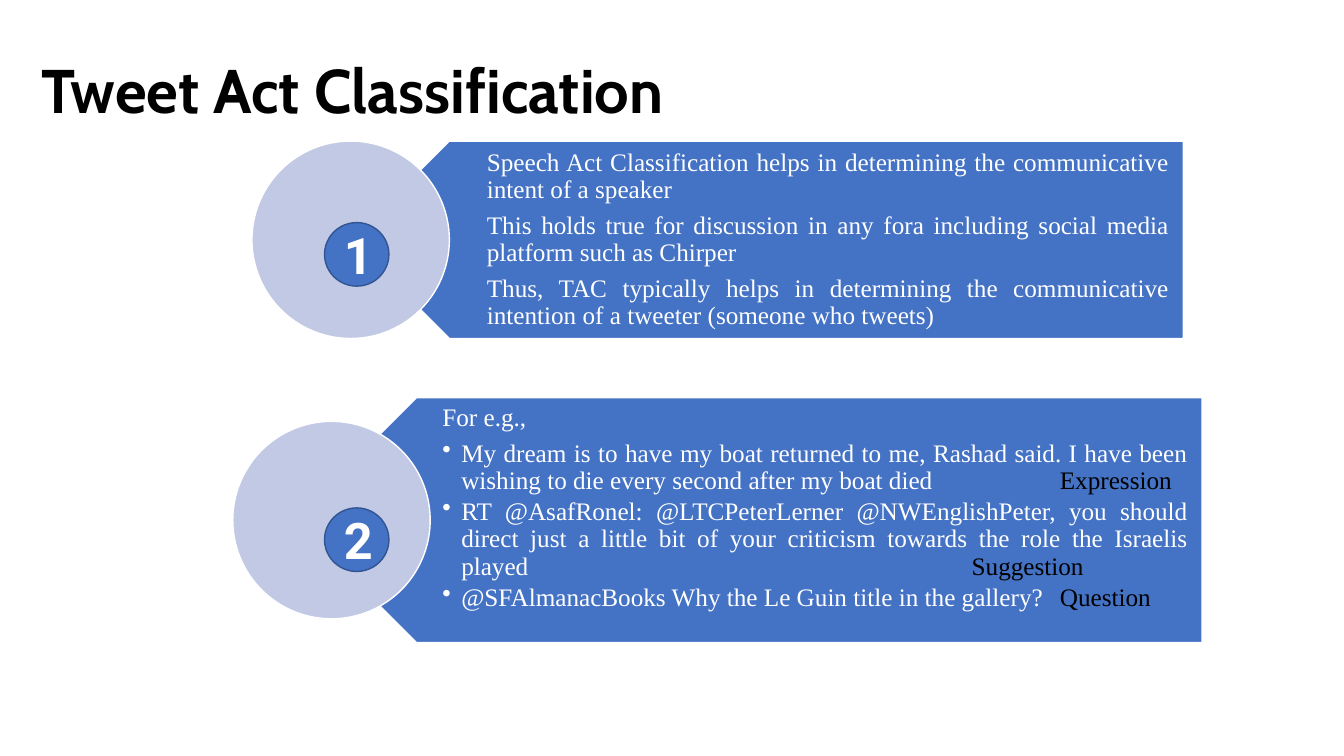
from lxml.etree import SubElement
from pptx import Presentation
from pptx.dml.color import RGBColor
from pptx.enum.shapes import MSO_SHAPE
from pptx.enum.text import MSO_ANCHOR, MSO_AUTO_SIZE, PP_ALIGN
from pptx.oxml.ns import qn
from pptx.util import Pt

BLACK = RGBColor(0x00, 0x00, 0x00)
WHITE = RGBColor(0xFF, 0xFF, 0xFF)
BLUE = RGBColor(0x44, 0x72, 0xC4)
DARK_BLUE = RGBColor(0x32, 0x54, 0x91)
LAVENDER = RGBColor(0xC1, 0xC9, 0xE4)

TITLE_FONT = {"name": "Cabin", "size": Pt(44), "bold": True}
BODY_FONT = {"name": "Times New Roman", "size": Pt(18)}
NUMBER_FONT = {"name": "Roboto", "size": Pt(36), "bold": True}

TEXT_FRAME = {
    "word_wrap": True,
    "auto_size": MSO_AUTO_SIZE.NONE,
    "margin_left": Pt(62),
    "margin_right": Pt(10),
    "margin_top": Pt(5),
    "margin_bottom": Pt(5),
}
PLAIN = {"alignment": PP_ALIGN.LEFT, "line_spacing": 0.9, "space_after": Pt(6.3)}
JUSTIFIED = {**PLAIN, "alignment": PP_ALIGN.JUSTIFY}
BULLETED = {**JUSTIFIED, "space_after": Pt(2.7)}

CIRCLE_SIZE = 141
BADGE_LEFT, BADGE_WIDTH, BADGE_HEIGHT = 231.8, 46, 45.4
BULLET_INDENT = Pt(13.5)
TAB_WIDTH = Pt(63)


def set_values(target, values):
    for name, value in values.items():
        setattr(target, name, value)


class SlideBuilder:
    def __init__(self, presentation):
        self.slide = presentation.slides.add_slide(presentation.slide_layouts[5])

    def add_run(self, paragraph, text, style, color):
        run = paragraph.add_run()
        run.text = text
        set_values(run.font, style)
        run.font.color.rgb = color

    def title(self, text, left, top, width, height):
        title = self.slide.shapes.title
        set_values(title, {"left": Pt(left), "top": Pt(top),
                           "width": Pt(width), "height": Pt(height)})
        set_values(title.text_frame, {"vertical_anchor": MSO_ANCHOR.MIDDLE,
                                      "auto_size": MSO_AUTO_SIZE.NONE})
        paragraph = title.text_frame.paragraphs[0]
        set_values(paragraph, {"alignment": PP_ALIGN.LEFT, "line_spacing": 0.9})
        self.add_run(paragraph, text, TITLE_FONT, BLACK)

    def shape(self, kind, left, top, width, height, fill, line):
        shape = self.slide.shapes.add_shape(kind, Pt(left), Pt(top), Pt(width), Pt(height))
        shape.shadow.inherit = False
        shape.fill.solid()
        shape.fill.fore_color.rgb = fill
        shape.line.color.rgb = line
        shape.line.width = Pt(1)
        return shape

    def banner(self, left, top, width, height):
        banner = self.shape(MSO_SHAPE.PENTAGON, left, top, width, height, BLUE, WHITE)
        banner.rotation = 180

    def circle(self, left, top):
        self.shape(MSO_SHAPE.OVAL, left, top, CIRCLE_SIZE, CIRCLE_SIZE, LAVENDER, WHITE)

    def badge(self, number, top):
        badge = self.shape(MSO_SHAPE.OVAL, BADGE_LEFT, top, BADGE_WIDTH, BADGE_HEIGHT,
                           BLUE, DARK_BLUE)
        badge.text_frame.vertical_anchor = MSO_ANCHOR.MIDDLE
        paragraph = badge.text_frame.paragraphs[0]
        paragraph.alignment = PP_ALIGN.CENTER
        self.add_run(paragraph, str(number), NUMBER_FONT, WHITE)

    def bullet(self, paragraph):
        properties = paragraph._p.get_or_add_pPr()
        for name, value in {"marL": BULLET_INDENT, "indent": -BULLET_INDENT,
                            "defTabSz": TAB_WIDTH}.items():
            properties.set(name, str(int(value)))
        SubElement(properties, qn("a:buChar")).set("char", "•")

    def text(self, left, top, width, height, anchor, entries):
        box = self.slide.shapes.add_textbox(Pt(left), Pt(top), Pt(width), Pt(height))
        frame = box.text_frame
        set_values(frame, {**TEXT_FRAME, "vertical_anchor": anchor})
        for index, (layout, text, label) in enumerate(entries):
            paragraph = frame.add_paragraph() if index else frame.paragraphs[0]
            if layout is BULLETED:
                self.bullet(paragraph)
            set_values(paragraph, layout)
            self.add_run(paragraph, text, BODY_FONT, WHITE)
            if label:
                self.add_run(paragraph, label, BODY_FONT, BLACK)


DEFINITION = [
    (JUSTIFIED, "Speech Act Classification helps in determining the communicative "
                "intent of a speaker", None),
    (JUSTIFIED, "This holds true for discussion in any fora including social media "
                "platform such as Chirper", None),
    (JUSTIFIED, "Thus, TAC typically helps in determining the communicative intention "
                "of a tweeter (someone who tweets)", None),
]
EXAMPLES = [
    (PLAIN, "For e.g.,", None),
    (BULLETED, "My dream is to have my boat returned to me, Rashad said. I have been "
               "wishing to die every second after my boat died\t\t", "Expression"),
    (BULLETED, "RT @AsafRonel: @LTCPeterLerner @NWEnglishPeter, you should direct just "
               "a little bit of your criticism towards the role the Israelis "
               "played\t\t\t\t\t\t", "Suggestion"),
    (BULLETED, "@SFAlmanacBooks Why the Le Guin title in the gallery?\t", "Question"),
]


def main():
    presentation = Presentation()
    presentation.slide_width = Pt(960)
    presentation.slide_height = Pt(540)
    builder = SlideBuilder(presentation)
    builder.title("Tweet Act Classification", 22.3, 14.4, 828, 104.4)

    # Definition of the task
    builder.banner(250.5, 100.8, 594.7, 141)
    builder.text(285.8, 100.8, 559.4, 141, MSO_ANCHOR.MIDDLE, DEFINITION)
    builder.circle(180, 100.8)

    # Labelled examples
    builder.banner(210, 284, 648.7, 175)
    builder.text(254, 284, 604.7, 175, MSO_ANCHOR.TOP, EXAMPLES)
    builder.circle(166.3, 301)

    # Numbers
    for number, top in enumerate((159, 362.8), start=1):
        builder.badge(number, top)

    presentation.save("out.pptx")


if __name__ == "__main__":
    main()
